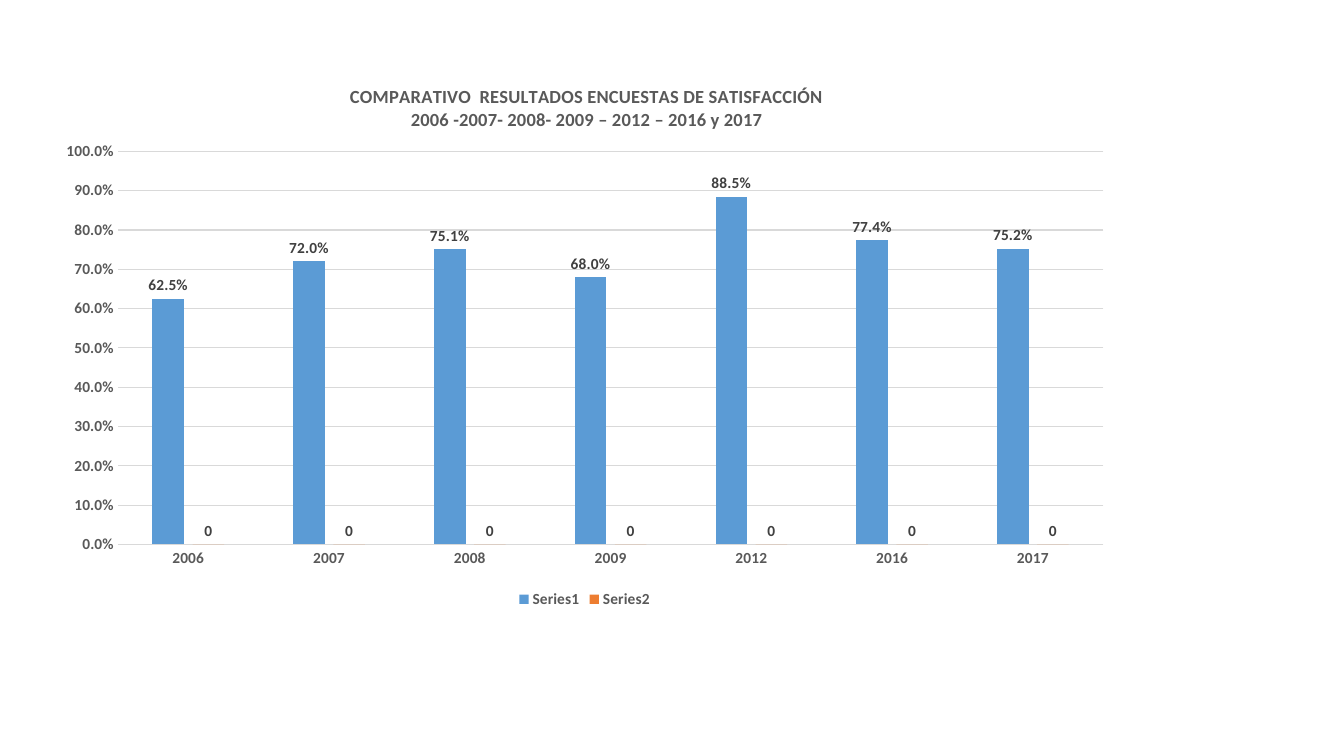
from lxml import etree
from pptx import Presentation
from pptx.chart.data import CategoryChartData
from pptx.dml.color import RGBColor
from pptx.enum.chart import XL_CHART_TYPE, XL_LABEL_POSITION, XL_LEGEND_POSITION, XL_TICK_MARK
from pptx.oxml.ns import qn
from pptx.util import Cm, Pt

COLUMNS = XL_CHART_TYPE.COLUMN_CLUSTERED
OUTSIDE_END = XL_LABEL_POSITION.OUTSIDE_END
BOTTOM = XL_LEGEND_POSITION.BOTTOM
NO_TICK = XL_TICK_MARK.NONE

COLORS = {
    "text": "595959",
    "label": "404040",
    "line": "D9D9D9",
    "Series1": "5B9BD5",
    "Series2": "ED7D31",
}
YEARS = ["2006", "2007", "2008", "2009", "2012", "2016", "2017"]
SATISFACTION = [0.625, 0.72, 0.751, 0.68, 0.885, 0.774, 0.752]
TITLE_LINES = [
    "COMPARATIVO  RESULTADOS ENCUESTAS DE SATISFACCIÓN",
    "2006 -2007- 2008- 2009 – 2012 – 2016 y 2017",
]


def format_font(font, color="text", size=11):
    font.name = "Calibri"
    font.size = Pt(size)
    font.bold = True
    font.color.rgb = RGBColor.from_string(COLORS[color])


def set_layout(parent, position, **settings):
    """Place a chart part by fractions of the chart area, after the child at position."""
    layout = parent.find(qn("c:layout"))
    if layout is None:
        layout = etree.Element(qn("c:layout"))
        parent.insert(position, layout)
    manual = etree.SubElement(layout, qn("c:manualLayout"))
    for name, value in settings.items():
        etree.SubElement(manual, qn(f"c:{name}")).set("val", str(value))


presentation = Presentation()
presentation.slide_width = Cm(33.87)
presentation.slide_height = Cm(19.05)
slide = presentation.slides.add_slide(presentation.slide_layouts[6])

# Chart data
chart_data = CategoryChartData()
chart_data.categories = YEARS
chart_data.add_series("Series1", SATISFACTION, "0.0%")
chart_data.add_series("Series2", [0] * len(YEARS), "General")
chart = slide.shapes.add_chart(
    COLUMNS, Cm(1.12), Cm(1.47), Cm(27.23), Cm(13.97), chart_data
).chart
format_font(chart.font)

# Title
chart.has_title = True
title = chart.chart_title
title.include_in_layout = False
title_frame = title.text_frame
for index, line in enumerate(TITLE_LINES):
    paragraph = title_frame.paragraphs[0] if index == 0 else title_frame.add_paragraph()
    run = paragraph.add_run()
    run.text = line
    format_font(paragraph.font, size=13.2)
    format_font(run.font, size=13.2)
set_layout(title._element, 1, xMode="edge", yMode="edge", x=0.28, y=0.04)

# Columns
plot = chart.plots[0]
plot.gap_width = 219
plot.overlap = -27
plot.vary_by_categories = False
for series in plot.series:
    series.format.fill.solid()
    series.format.fill.fore_color.rgb = RGBColor.from_string(COLORS[series.name])
    labels = series.data_labels
    labels.show_value = True
    labels.position = OUTSIDE_END
    format_font(labels.font, "label")
set_layout(
    chart._chartSpace.chart.plotArea, 0,
    layoutTarget="inner", xMode="edge", yMode="edge",
    x=0.068, y=0.168, w=0.912, h=0.709,
)

# Axes
value_axis = chart.value_axis
value_axis.minimum_scale = 0
value_axis.maximum_scale = 1
value_axis.major_unit = 0.1
value_axis.tick_labels.number_format = "0.0%"
value_axis.tick_labels.number_format_is_linked = False
value_axis.format.line.fill.background()
category_axis = chart.category_axis
for axis in (category_axis, value_axis):
    axis.major_tick_mark = NO_TICK
    axis.minor_tick_mark = NO_TICK
    format_font(axis.tick_labels.font)
for line in (category_axis.format.line, value_axis.major_gridlines.format.line):
    line.color.rgb = RGBColor.from_string(COLORS["line"])
    line.width = Pt(0.75)

# Legend
chart.has_legend = True
chart.legend.position = BOTTOM
chart.legend.include_in_layout = False
format_font(chart.legend.font)

presentation.save("out.pptx")
